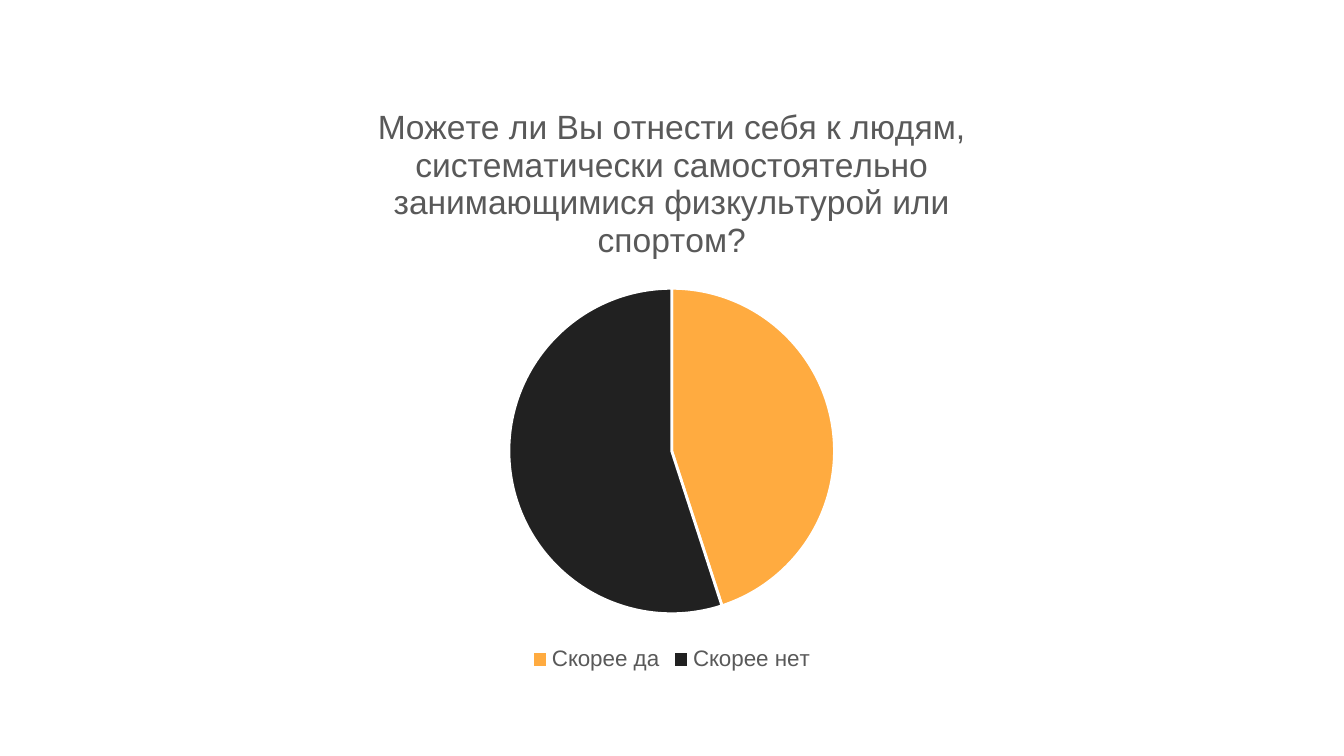
from pptx import Presentation
from pptx.chart.data import CategoryChartData
from pptx.dml.color import RGBColor
from pptx.enum.chart import XL_CHART_TYPE, XL_LEGEND_POSITION
from pptx.util import Cm, Pt

TITLE = ("Можете ли Вы отнести себя к людям, систематически "
         "самостоятельно занимающимися физкультурой или спортом?")
ANSWERS = {"Скорее да": (45, "FFAB40"), "Скорее нет": (55, "212121")}


def rgb(value):
    return RGBColor.from_string(value)


def style_font(font, size, color, name="Arial"):
    font.name = name
    font.size = Pt(size)
    font.bold = False
    font.color.rgb = rgb(color)


def add_text(tf, text, **fmt):
    r = tf.paragraphs[0].add_run()
    r.text = text
    style_font(r.font, **fmt)


class Deck:
    text_color = "595959"
    background = "FFFFFF"

    def __init__(self, width, height):
        self.prs = Presentation()
        self.prs.slide_width, self.prs.slide_height = width, height

    def add_slide(self):
        self.s = self.prs.slides.add_slide(self.prs.slide_layouts[6])
        fill = self.s.background.fill
        fill.solid()
        fill.fore_color.rgb = rgb(self.background)

    def pie(self, left, top, width, height, title, answers):
        data = CategoryChartData()
        data.categories = list(answers)
        data.add_series("Series 1", [value for value, _ in answers.values()])
        chart = self.s.shapes.add_chart(
            XL_CHART_TYPE.PIE, left, top, width, height, data).chart
        style_font(chart.font, size=10, color="000000")

        # Title
        chart.has_title = True
        add_text(chart.chart_title.text_frame, title,
                 size=18, color=self.text_color)
        chart.chart_title.include_in_layout = False

        # Legend
        chart.has_legend = True
        chart.legend.position = XL_LEGEND_POSITION.BOTTOM
        chart.legend.include_in_layout = False
        style_font(chart.legend.font, size=12, color=self.text_color)

        # Slices
        plot = chart.plots[0]
        plot.vary_by_categories = True
        for i, (_, color) in enumerate(answers.values()):
            fmt = plot.series[0].points[i].format
            fmt.fill.solid()
            fmt.fill.fore_color.rgb = rgb(color)
            fmt.line.color.rgb = rgb(self.background)
            fmt.line.width = Pt(1.5)


def main():
    deck = Deck(Cm(25.4), Cm(14.29))
    deck.add_slide()
    deck.pie(Cm(4.23), Cm(1.5), Cm(16.93), Cm(11.29), TITLE, ANSWERS)
    deck.prs.save("out.pptx")


if __name__ == "__main__":
    main()
